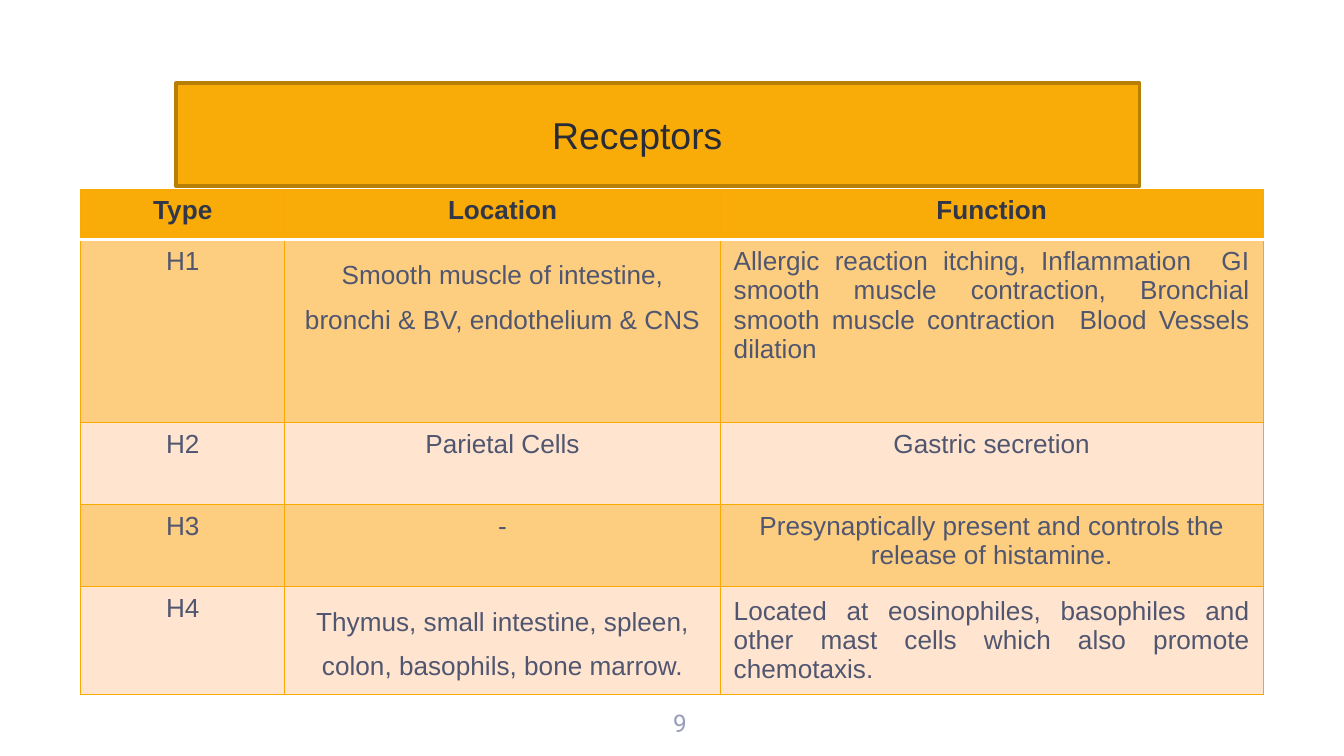
from lxml.etree import SubElement
from pptx import Presentation
from pptx.dml.color import RGBColor
from pptx.enum.shapes import MSO_SHAPE
from pptx.enum.text import MSO_ANCHOR, PP_ALIGN
from pptx.oxml.ns import qn
from pptx.util import Pt

PX = 4572  # 200 px to the inch
INK = {
    "gold": "F9AC08", "edge": "B87F06", "grid": "F9AA02", "white": "FFFFFF",
    "dark": "FDCE80", "light": "FFE5D0",
    "title": "282B38", "head": "313648", "body": "505670", "page": "979CB8",
}


def style(par, size, ink, align=PP_ALIGN.CENTER, face="Arial", bold=False):
    par.alignment = align
    for run in par.runs:
        run.font.name = face
        run.font.size = Pt(size)
        run.font.bold = bold
        run.font.color.rgb = RGBColor.from_string(INK[ink])


def border(cell, side, ink, width):
    line = SubElement(cell._tc.get_or_add_tcPr(), qn("a:ln" + side), w=str(Pt(width)))
    fill = SubElement(line, qn("a:solidFill"))
    SubElement(fill, qn("a:srgbClr"), val=INK[ink])


deck = Presentation()
deck.slide_width, deck.slide_height = 2000 * PX, 1125 * PX
slide = deck.slides.add_slide(deck.slide_layouts[6])

# Page number
box = slide.shapes.add_textbox(952 * PX, 1034 * PX, 120 * PX, 66 * PX)
frame = box.text_frame
frame.word_wrap = True
frame.margin_left = frame.margin_right = 20 * PX
frame.margin_top = frame.margin_bottom = 20 * PX
frame.text = "9"
style(frame.paragraphs[0], 13, "page", face="Roboto")

# Title bar
bar = slide.shapes.add_shape(MSO_SHAPE.RECTANGLE, 262 * PX, 124 * PX, 1434 * PX, 153 * PX)
bar.shadow.inherit = False
bar.fill.solid()
bar.fill.fore_color.rgb = RGBColor.from_string(INK["gold"])
bar.line.color.rgb = RGBColor.from_string(INK["edge"])
bar.line.width = Pt(2)

# Title
box = slide.shapes.add_textbox(802 * PX, 157 * PX, 910 * PX, 88 * PX)
box.text_frame.word_wrap = True
box.text_frame.text = "Receptors"
style(box.text_frame.paragraphs[0], 20, "title", PP_ALIGN.LEFT)

# Receptor table
rows = [
    ("Type", "Location", "Function"),
    ("H1", "Smooth muscle of intestine, bronchi & BV, endothelium & CNS",
     "Allergic reaction itching, Inflammation  GI smooth muscle contraction, "
     "Bronchial smooth muscle contraction  Blood Vessels dilation"),
    ("H2", "Parietal Cells", "Gastric secretion"),
    ("H3", "-", "Presynaptically present and controls the release of histamine."),
    ("H4", "Thymus, small intestine, spleen, colon, basophils, bone marrow.",
     "Located at eosinophiles, basophiles and other mast cells which also "
     "promote chemotaxis."),
]
wides = [304, 648, 808]
highs = [75, 272, 122, 122, 159]
table = slide.shapes.add_table(
    len(rows), len(wides), 120 * PX, 282 * PX, sum(wides) * PX, sum(highs) * PX).table
for col, wide in zip(table.columns, wides):
    col.width = wide * PX
for row, high in zip(table.rows, highs):
    row.height = high * PX

for r, row in enumerate(rows):
    for c, text in enumerate(row):
        cell = table.cell(r, c)
        for side in "LRTB":
            rule = (r, side) in ((0, "B"), (1, "T"))  # white rule under the header
            border(cell, side, "white" if rule else "grid", 2 if rule else 0.75)
        tone = "gold" if r == 0 else "dark" if r % 2 else "light"
        cell.fill.solid()
        cell.fill.fore_color.rgb = RGBColor.from_string(INK[tone])
        cell.text_frame.text = text
        par = cell.text_frame.paragraphs[0]
        long = r in (1, 4)
        align = PP_ALIGN.JUSTIFY if long and c == 2 else PP_ALIGN.CENTER
        style(par, 14, "body" if r else "head", align, bold=r == 0)
        if long and c == 1:
            par.line_spacing = 1.5
table.cell(4, 2).vertical_anchor = MSO_ANCHOR.MIDDLE

deck.save("out.pptx")
